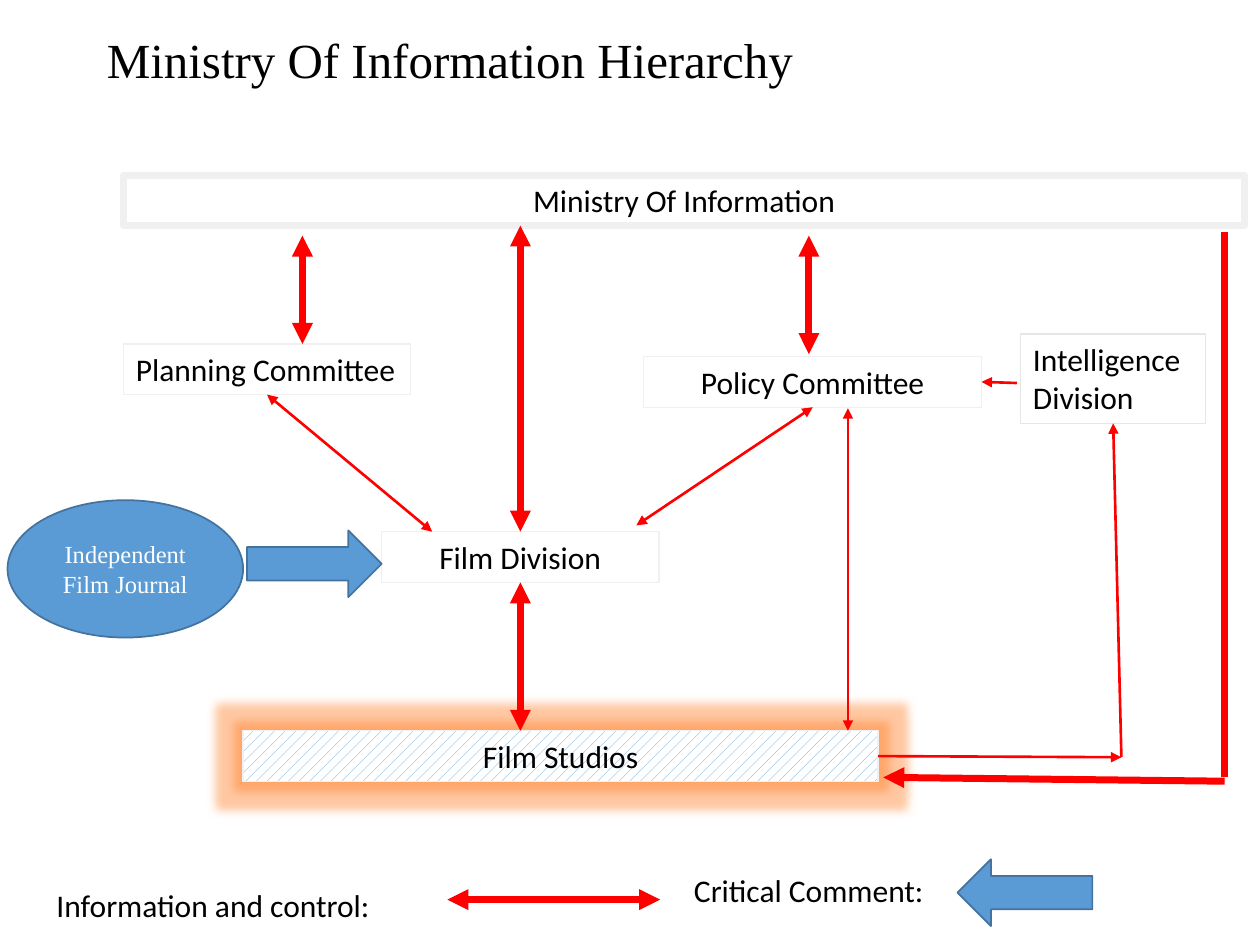
from lxml.etree import SubElement
from pptx import Presentation
from pptx.dml.color import RGBColor
from pptx.enum.dml import MSO_PATTERN_TYPE as Pattern
from pptx.enum.shapes import MSO_CONNECTOR as Connector, MSO_SHAPE as Shape
from pptx.enum.text import MSO_ANCHOR as Anchor, MSO_AUTO_SIZE as AutoSize, PP_ALIGN as Align
from pptx.oxml.ns import qn
from pptx.util import Inches, Pt

BLACK = RGBColor(0x00, 0x00, 0x00)
WHITE = RGBColor(0xFF, 0xFF, 0xFF)
RED = RGBColor(0xFF, 0x00, 0x00)
BLUE = RGBColor(0x5B, 0x9B, 0xD5)
DARK_BLUE = RGBColor(0x43, 0x73, 0x9E)
PALE_GREY = RGBColor(0xF1, 0xF0, 0xF0)
GREY = RGBColor(0xE7, 0xE6, 0xE6)
ORANGE = RGBColor(0xFF, 0x76, 0x19)

SLIDE_WIDTH, SLIDE_HEIGHT = Inches(10), Inches(7.5)
COLUMNS, ROWS = 100, 75
TOP, LEFT, BOTTOM, RIGHT = range(4)
THICK, THIN = 4, 1.5
BOX_ROWS = 4.02

SANS = {"name": "Calibri", "size": Pt(18)}
SERIF = {"name": "Times New Roman", "size": Pt(14)}
TITLE = {"name": "Times New Roman", "size": Pt(28)}
GROWING = {"word_wrap": True, "auto_size": AutoSize.SHAPE_TO_FIT_TEXT}
CENTRED = {"alignment": Align.CENTER}


def across(columns):
    return round(SLIDE_WIDTH * columns / COLUMNS)


def down(rows):
    return round(SLIDE_HEIGHT * rows / ROWS)


def place(area):
    left, top, width, height = area
    return across(left), down(top), across(width), down(height)


def apply(target, values):
    for name, value in values.items():
        setattr(target, name, value)


def write(shape, text, font, colour, frame_format, para_format):
    frame = shape.text_frame
    apply(frame, frame_format)
    para = frame.paragraphs[0]
    apply(para, para_format)
    span = para.add_run()
    span.text = text
    apply(span.font, font)
    span.font.color.rgb = colour


def add_label(page, text, area, font=SANS, frame_format=GROWING, para_format={}):
    label = page.shapes.add_textbox(*place(area))
    write(label, text, font, BLACK, frame_format, para_format)


def add_shape(page, kind, area, line, weight, fill=None):
    shape = page.shapes.add_shape(kind, *place(area))
    shape.shadow.inherit = False
    if fill is None:
        shape.fill.background()
    else:
        shape.fill.solid()
        shape.fill.fore_color.rgb = fill
    shape.line.color.rgb = line
    shape.line.width = Pt(weight)
    return shape


def add_box(page, text, area, line=PALE_GREY, weight=0.75, align=Align.CENTER):
    box = add_shape(page, Shape.RECTANGLE, area, line, weight)
    frame_format = {**GROWING, "vertical_anchor": Anchor.TOP}
    write(box, text, SANS, BLACK, frame_format, {"alignment": align})
    return box


def add_hatch_and_glow(box):
    box.fill.patterned()
    box.fill.pattern = Pattern.DASHED_UPWARD_DIAGONAL
    box.fill.fore_color.rgb = BLUE
    box.fill.back_color.rgb = WHITE
    effects = box._element.spPr.find(qn("a:effectLst"))
    glow = SubElement(effects, qn("a:glow"), rad=str(Pt(11)))
    colour = SubElement(glow, qn("a:srgbClr"), val=str(ORANGE))
    SubElement(colour, qn("a:alpha"), val="40000")


def add_link(page, start, end, weight, heads="both", source=None, target=None):
    points = across(start[0]), down(start[1]), across(end[0]), down(end[1])
    link = page.shapes.add_connector(Connector.STRAIGHT, *points)
    if source:
        link.begin_connect(*source)
    if target:
        link.end_connect(*target)
    link.line.color.rgb = RED
    link.line.width = Pt(weight)
    outline = link.line._get_or_add_ln()
    ends = {"both": ("headEnd", "tailEnd"), "end": ("tailEnd",), "none": ()}
    for end_name in ends[heads]:
        SubElement(outline, qn(f"a:{end_name}"), type="triangle")
    SubElement(link._element.spPr, qn("a:effectLst"))


def add_boxes(page):
    add_box(page, "Ministry Of Information", (9.8, 13.9, 89, BOX_ROWS), weight=THICK)
    planning = add_box(page, "Planning Committee", (9.8, 27.3, 22.8, BOX_ROWS), align=Align.LEFT)
    policy = add_box(page, "Policy Committee", (51.1, 28.3, 26.8, BOX_ROWS))
    division = add_box(page, "Film Division", (30.3, 42.2, 22, BOX_ROWS))
    studios = add_box(page, "Film Studios", (19.3, 58, 50.4, BOX_ROWS))
    add_hatch_and_glow(studios)
    intelligence = add_box(page, "Intelligence Division", (81, 26.5, 14.7, 7.1), GREY, align=Align.LEFT)
    return planning, policy, division, studios, intelligence


def add_links(page, planning, policy, division, studios, intelligence):
    add_link(page, (24, 18.7), (24, 27.3), THICK)
    add_link(page, (64.2, 18.7), (64.2, 28.1), THICK)
    add_link(page, (41.3, 17.9), (41.3, 42.2), THICK, target=(division, TOP))
    add_link(page, (41.3, 46.3), (41.3, 58), THICK, source=(division, BOTTOM))
    add_link(page, (97.2, 18.4), (97.2, 61.7), THICK, "none")
    add_link(page, (97.2, 62), (70.1, 61.7), THICK, "end")
    add_link(page, (21.3, 31.3), (34.3, 42.2), THIN, source=(planning, BOTTOM))
    add_link(page, (64.5, 32.6), (50.5, 41.7), THIN, source=(policy, BOTTOM))
    add_link(page, (67.3, 32.4), (67.3, 58), THIN)
    add_link(page, (70.1, 60.1), (89, 60.1), THIN, "end", source=(studios, RIGHT))
    add_link(page, (89, 60.1), (88.6, 33.5), THIN, "end", target=(intelligence, BOTTOM))
    add_link(page, (80.7, 30.4), (77.8, 30.4), THIN, "end", target=(policy, RIGHT))


def add_comment_source(page):
    letter = add_shape(page, Shape.OVAL, (0.6, 39.7, 18.7, 10.9), DARK_BLUE, 1, BLUE)
    frame_format = {"word_wrap": True, "vertical_anchor": Anchor.MIDDLE}
    write(letter, "Independent Film Journal", SERIF, WHITE, frame_format, CENTRED)
    add_shape(page, Shape.RIGHT_ARROW, (19.6, 42.1, 10.7, 5.3), DARK_BLUE, 1, BLUE)


def add_key(page):
    add_label(page, "Information and control:", (3.5, 69.8, 30.7, BOX_ROWS))
    add_link(page, (35.5, 71.4), (52.4, 71.4), THICK)
    add_label(page, "Critical Comment:", (54.1, 68.6, 20.3, BOX_ROWS))
    add_shape(page, Shape.LEFT_ARROW, (76, 68.2, 10.7, 5.3), DARK_BLUE, 1, BLUE)


def main():
    deck = Presentation()
    apply(deck, {"slide_width": SLIDE_WIDTH, "slide_height": SLIDE_HEIGHT})
    page = deck.slides.add_slide(deck.slide_layouts[6])
    title_frame = {"word_wrap": True, "vertical_anchor": Anchor.TOP, "margin_top": 0}
    add_label(page, "Ministry Of Information Hierarchy", (7.5, 2.9, 84.3, 9.4),
              TITLE, title_frame, {"line_spacing": 0.9})
    boxes = add_boxes(page)
    add_links(page, *boxes)
    add_comment_source(page)
    add_key(page)
    deck.save("out.pptx")


if __name__ == "__main__":
    main()
